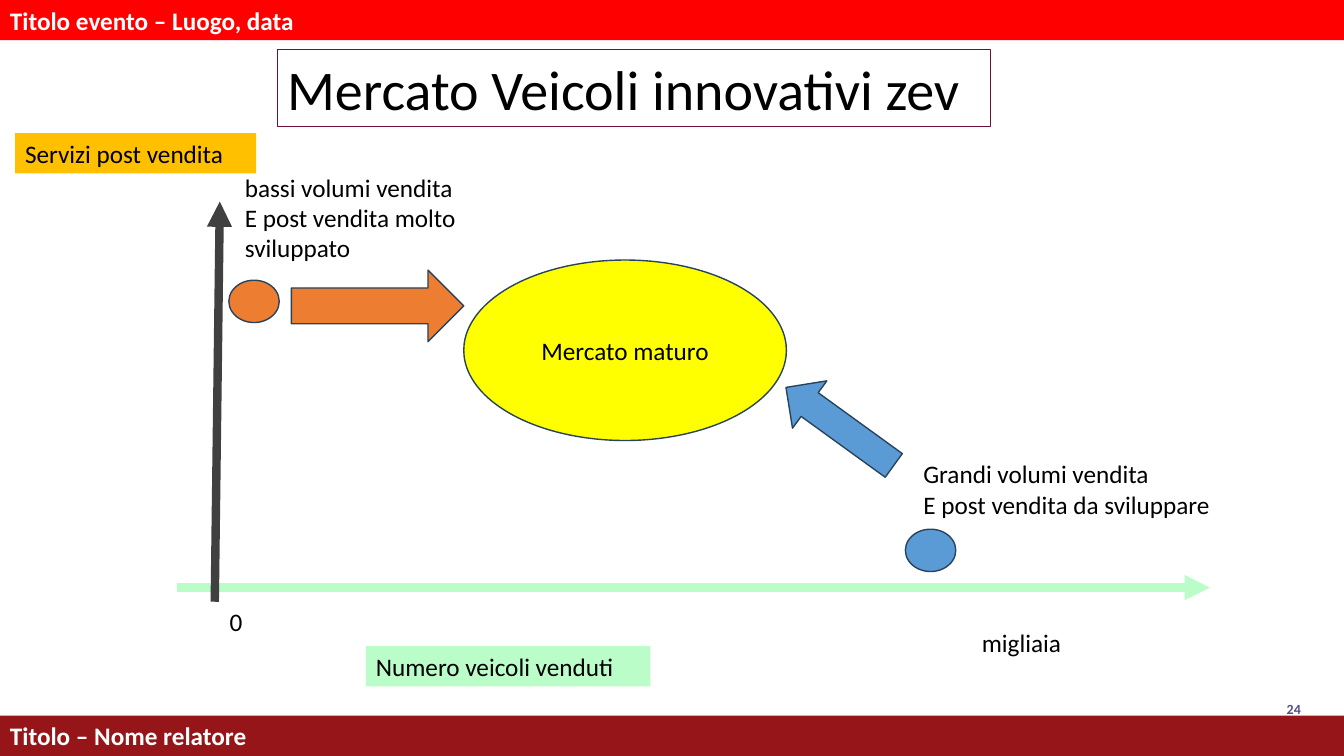
from lxml import etree
from pptx import Presentation
from pptx.dml.color import RGBColor
from pptx.enum.shapes import MSO_CONNECTOR as Connector, MSO_SHAPE as Shape
from pptx.enum.text import MSO_ANCHOR as Anchor, MSO_AUTO_SIZE as AutoSize, PP_ALIGN as Align
from pptx.oxml.ns import qn
from pptx.util import Inches, Pt

BLACK = RGBColor(0x00, 0x00, 0x00)
WHITE = RGBColor(0xFF, 0xFF, 0xFF)
RED = RGBColor(0xFF, 0x00, 0x00)
DARK_RED = RGBColor(0x96, 0x15, 0x18)
AMBER = RGBColor(0xFF, 0xC0, 0x00)
ORANGE = RGBColor(0xED, 0x7D, 0x31)
YELLOW = RGBColor(0xFF, 0xFF, 0x00)
MINT = RGBColor(0xBB, 0xFD, 0xC8)
BLUE = RGBColor(0x5B, 0x9B, 0xD5)
OUTLINE = RGBColor(0x28, 0x44, 0x5D)
GREY = RGBColor(0x40, 0x40, 0x40)
PLUM = RGBColor(0x6F, 0x10, 0x3C)
SLATE = RGBColor(0x4F, 0x4F, 0x8A)

WIDTH, HEIGHT, BAR_HEIGHT = 13.33, 7.5, 0.4


class MarketSlide:
    font = "Calibri"
    text_size = 18

    def __init__(self, presentation):
        self.slide = presentation.slides.add_slide(presentation.slide_layouts[6])

    def add_lines(self, shape, lines, size=None, color=BLACK, bold=False, align=Align.LEFT):
        frame = shape.text_frame
        for index, line in enumerate(lines):
            paragraph = frame.add_paragraph() if index else frame.paragraphs[0]
            paragraph.alignment = align
            run = paragraph.add_run()
            run.text = line
            run.font.name = self.font
            run.font.size = Pt(size or self.text_size)
            run.font.bold = bold
            run.font.color.rgb = color

    def shape(self, kind, left, top, width, height, fill, line=OUTLINE, rotation=0):
        shape = self.slide.shapes.add_shape(
            kind, Inches(left), Inches(top), Inches(width), Inches(height))
        shape.shadow.inherit = False
        shape.rotation = rotation
        shape.fill.solid()
        shape.fill.fore_color.rgb = fill
        if line is None:
            shape.line.fill.background()
        else:
            shape.line.color.rgb = line
            shape.line.width = Pt(1)
        return shape

    def bar(self, top, text, fill):
        """Add a full-width coloured band with bold white text."""
        bar = self.shape(Shape.RECTANGLE, 0, top, WIDTH, BAR_HEIGHT, fill, line=None)
        bar.text_frame.word_wrap = True
        bar.text_frame.vertical_anchor = Anchor.TOP
        self.add_lines(bar, [text], color=WHITE, bold=True)

    def label(self, left, top, width, height, *lines, fill=None, line=None, size=None):
        """Add a text box that hugs its unwrapped lines."""
        box = self.slide.shapes.add_textbox(
            Inches(left), Inches(top), Inches(width), Inches(height))
        box.text_frame.word_wrap = False
        box.text_frame.auto_size = AutoSize.SHAPE_TO_FIT_TEXT
        if fill is not None:
            box.fill.solid()
            box.fill.fore_color.rgb = fill
        if line is not None:
            box.line.color.rgb = line
            box.line.width = Pt(0.75)
        self.add_lines(box, lines, size)

    def page_number(self, number):
        box = self.slide.shapes.add_textbox(
            Inches(12.33), Inches(6.9), Inches(0.67), Inches(0.5))
        box.text_frame.word_wrap = True
        self.add_lines(box, [number], 10, SLATE, bold=True, align=Align.RIGHT)

    def axis(self, start_x, start_y, end_x, end_y, color):
        axis = self.slide.shapes.add_connector(
            Connector.STRAIGHT, Inches(start_x), Inches(start_y), Inches(end_x), Inches(end_y))
        axis.line.color.rgb = color
        axis.line.width = Pt(6)
        properties = axis._element.spPr
        etree.SubElement(properties.find(qn("a:ln")), qn("a:tailEnd"), type="triangle")
        etree.SubElement(properties, qn("a:effectLst"))

    def dot(self, left, top, fill):
        self.shape(Shape.OVAL, left, top, 0.5, 0.42, fill)


def main():
    presentation = Presentation()
    presentation.slide_width = Inches(WIDTH)
    presentation.slide_height = Inches(HEIGHT)
    market = MarketSlide(presentation)

    market.bar(0, "Titolo evento – Luogo, data", RED)
    market.bar(HEIGHT - BAR_HEIGHT, "Titolo – Nome relatore", DARK_RED)
    market.page_number("24")
    market.label(2.75, 0.49, 7.07, 0.77, "Mercato Veicoli innovativi zev", line=PLUM, size=40)

    market.label(0.15, 1.32, 2.39, 0.4, "Servizi post vendita", fill=AMBER)
    market.label(3.63, 6.41, 2.82, 0.4, "Numero veicoli venduti", fill=MINT)
    market.axis(1.76, 5.83, 12, 5.83, MINT)
    market.axis(2.13, 5.97, 2.18, 2, GREY)
    market.label(2.18, 5.97, 0.34, 0.4, "0")
    market.label(9.64, 6.17, 1, 0.4, "migliaia")

    market.dot(2.27, 2.78, ORANGE)
    market.label(2.33, 1.66, 2.56, 1.01,
                 "bassi volumi vendita", "E post vendita molto", "sviluppato")
    market.shape(Shape.RIGHT_ARROW, 2.89, 2.68, 1.71, 0.71, ORANGE)

    market.dot(8.98, 5.25, BLUE)
    market.label(9.06, 4.5, 3.37, 0.71,
                 "Grandi volumi vendita", "E post vendita da sviluppare")
    market.shape(Shape.RIGHT_ARROW, 7.67, 3.94, 1.32, 0.58, BLUE, rotation=215.9)

    mature = market.shape(Shape.OVAL, 4.6, 2.58, 3.2, 1.79, YELLOW)
    mature.text_frame.vertical_anchor = Anchor.MIDDLE
    market.add_lines(mature, ["Mercato maturo"], align=Align.CENTER)

    presentation.save("out.pptx")


if __name__ == "__main__":
    main()
